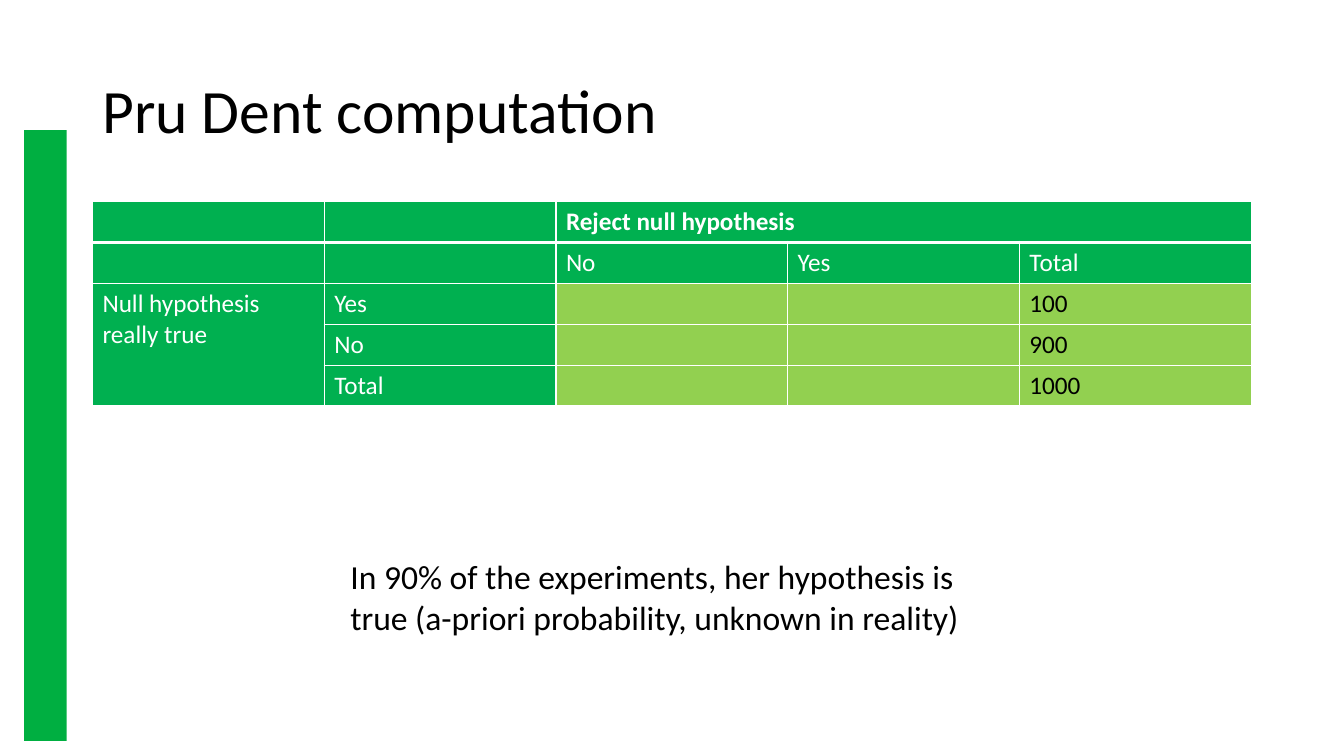
from dataclasses import dataclass

from lxml import etree
from pptx import Presentation
from pptx.dml.color import RGBColor
from pptx.enum.shapes import MSO_SHAPE
from pptx.enum.text import MSO_ANCHOR, PP_ALIGN
from pptx.oxml.ns import qn
from pptx.util import Cm, Pt

RECT = MSO_SHAPE.RECTANGLE
TOP, MIDDLE = MSO_ANCHOR.TOP, MSO_ANCHOR.MIDDLE
LEFT = PP_ALIGN.LEFT

WHITE = RGBColor(0xFF, 0xFF, 0xFF)
BLACK = RGBColor(0x00, 0x00, 0x00)
BAR_GREEN = RGBColor(0x00, 0xAF, 0x41)
HEAD_GREEN = RGBColor(0x00, 0xB0, 0x50)
BODY_GREEN = RGBColor(0x92, 0xD0, 0x50)
FONT = "Calibri"

COL_W, ROW_H = 5.84, 1.03
HEAD_ROWS, HEAD_COLS = 2, 2
ROWS = [
    ["", "", "Reject null hypothesis", "", ""],
    ["", "", "No", "Yes", "Total"],
    ["Null hypothesis really true", "Yes", "", "", "100"],
    ["", "No", "", "", "900"],
    ["", "Total", "", "", "1000"],
]


@dataclass
class Box:
    x: float
    y: float
    w: float
    h: float
    fill: RGBColor | None = None
    text: str = ""
    size: float = 18
    anchor: MSO_ANCHOR = TOP
    spacing: float = 1.0


BOXES = [
    Box(0.61, 3.28, 1.07, 15.39, BAR_GREEN),
    Box(2.33, 1.01, 29.21, 3.68, None, "Pru Dent computation", 44, MIDDLE, 0.9),
    Box(8.58, 13.89, 15.92, 2.31, WHITE,
        "In 90% of the experiments, her hypothesis is true "
        "(a-priori probability, unknown in reality)", 24),
]


def add_text(tf, text: str, size: float, color: RGBColor, bold: bool = False) -> None:
    p = tf.paragraphs[0]
    p.alignment = LEFT
    r = p.add_run()
    r.text = text
    r.font.name = FONT
    r.font.size = Pt(size)
    r.font.bold = bold
    r.font.color.rgb = color


def add_box(s, box: Box) -> None:
    place = Cm(box.x), Cm(box.y), Cm(box.w), Cm(box.h)
    if box.fill is None:
        sp = s.shapes.add_textbox(*place)
    else:
        sp = s.shapes.add_shape(RECT, *place)
        sp.shadow.inherit = False
        sp.fill.solid()
        sp.fill.fore_color.rgb = box.fill
        sp.line.fill.background()
    if box.text:
        tf = sp.text_frame
        tf.word_wrap = True
        tf.vertical_anchor = box.anchor
        add_text(tf, box.text, box.size, BLACK)
        tf.paragraphs[0].line_spacing = box.spacing


def set_borders(cell, widths: dict[str, float]) -> None:
    tc_pr = cell._tc.get_or_add_tcPr()
    for i, (side, width) in enumerate(widths.items()):
        ln = etree.Element(qn(f"a:ln{side}"), w=str(Pt(width)))
        fill = etree.SubElement(ln, qn("a:solidFill"))
        etree.SubElement(fill, qn("a:srgbClr"), val=str(WHITE))
        tc_pr.insert(i, ln)


def add_results_table(s) -> None:
    n_rows, n_cols = len(ROWS), len(ROWS[0])
    table = s.shapes.add_table(n_rows, n_cols, Cm(2.33), Cm(5.08),
                               Cm(COL_W * n_cols), Cm(ROW_H * n_rows)).table
    for col in table.columns:
        col.width = Cm(COL_W)
    for i, texts in enumerate(ROWS):
        table.rows[i].height = Cm(ROW_H)
        for j, text in enumerate(texts):
            cell = table.cell(i, j)
            head = i < HEAD_ROWS or j < HEAD_COLS
            cell.fill.solid()
            cell.fill.fore_color.rgb = HEAD_GREEN if head else BODY_GREEN
            set_borders(cell, {"L": 1, "R": 1, "T": 3 if i == 1 else 1,
                               "B": 3 if i == 0 else 1})
            if text:
                add_text(cell.text_frame, text, 18, WHITE if head else BLACK, i == 0)
    table.cell(0, 2).merge(table.cell(0, 4))
    table.cell(2, 0).merge(table.cell(4, 0))


def main() -> None:
    prs = Presentation()
    prs.slide_width, prs.slide_height = Cm(33.87), Cm(19.05)
    s = prs.slides.add_slide(prs.slide_layouts[6])
    bar, title, note = BOXES
    add_box(s, bar)
    add_box(s, title)
    add_results_table(s)
    add_box(s, note)
    prs.save("out.pptx")


if __name__ == "__main__":
    main()
